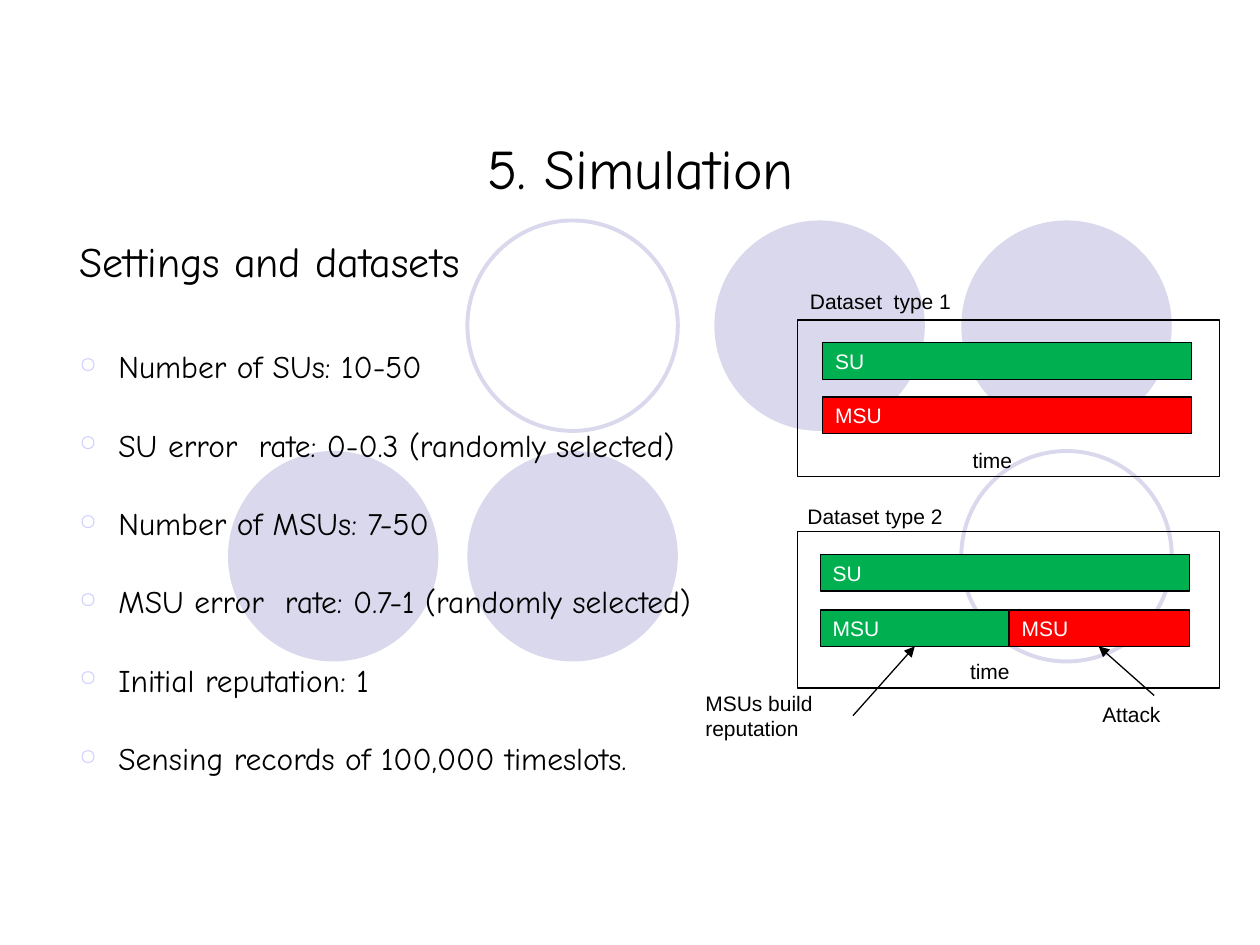
from lxml.etree import SubElement
from pptx import Presentation
from pptx.dml.color import RGBColor
from pptx.enum.shapes import MSO_CONNECTOR, MSO_SHAPE
from pptx.enum.text import MSO_ANCHOR, PP_ALIGN
from pptx.oxml.ns import qn
from pptx.util import Inches, Pt

HUES = {"black": "000000", "white": "FFFFFF", "green": "00B050",
        "red": "FF0000", "disc": "D9D8EC", "dot": "CCCCFF"}
HEX = {name: RGBColor.from_string(code) for name, code in HUES.items()}
HEAD, BODY = "Comic Neue", "Arial"

deck = Presentation()
deck.slide_width, deck.slide_height = Inches(10), Inches(7.5)
slide = deck.slides.add_slide(deck.slide_layouts[6])
shapes = slide.shapes


def add_form(kind, x, y, w, h, fill=None, line=None, width=0.75):
    form = shapes.add_shape(kind, Inches(x), Inches(y), Inches(w), Inches(h))
    form.shadow.inherit = False
    if fill:
        form.fill.solid()
        form.fill.fore_color.rgb = HEX[fill]
    else:
        form.fill.background()
    if line:
        form.line.color.rgb = HEX[line]
        form.line.width = Pt(width)
    else:
        form.line.fill.background()
    return form


def set_text(para, text, size=12, face=BODY, hue="black", **form):
    para.text = text
    for key, value in {"alignment": PP_ALIGN.LEFT, **form}.items():
        setattr(para, key, value)
    for key, value in {"size": Pt(size), "name": face}.items():
        setattr(para.font, key, value)
    para.font.color.rgb = HEX[hue]


# Backdrop circles: column, row, filled or ring
cols, rows = [1.81, 3.71, 5.67, 7.63], [1.75, 3.58]
for col, row, full in [(3, 0, True), (2, 0, True), (1, 0, False),
                       (1, 1, True), (0, 1, True), (3, 1, False)]:
    paint = {"fill": "disc"} if full else {"line": "disc", "width": 2.25}
    add_form(MSO_SHAPE.OVAL, cols[col], rows[row], 1.67, 1.67, **paint)

# Title
title = shapes.add_textbox(Inches(0.5), Inches(0.67), Inches(9.17), Inches(0.97))
frame = title.text_frame
frame.word_wrap, frame.vertical_anchor = True, MSO_ANCHOR.BOTTOM
set_text(frame.paragraphs[0], "5. Simulation", 32, HEAD, alignment=PP_ALIGN.CENTER)

# Settings list
box = shapes.add_textbox(Inches(0.13), Inches(1.87), Inches(6.13), Inches(3.56))
frame = box.text_frame
frame.word_wrap = True
for side in ("left", "top", "right", "bottom"):
    setattr(frame, f"margin_{side}", 0)
para = frame.paragraphs[0]
para._p.get_or_add_pPr().set("marL", str(Inches(0.5)))
set_text(para, "Settings and datasets", 24, HEAD)
items = ["Number of SUs: 10-50",
         "SU error  rate: 0-0.3 (randomly selected)",
         "Number of MSUs: 7-50",
         "MSU error  rate: 0.7-1 (randomly selected)",
         "Initial reputation: 1",
         "Sensing records of 100,000 timeslots."]
for num, item in enumerate(items):
    para = frame.add_paragraph()
    props = para._p.get_or_add_pPr()
    props.set("marL", str(Inches(0.81)))
    props.set("indent", str(Inches(-0.31)))
    tint = SubElement(props, qn("a:buClr"))
    SubElement(tint, qn("a:srgbClr"), val=HUES["dot"])
    SubElement(props, qn("a:buSzPct"), val="70000")
    SubElement(props, qn("a:buChar"), char="○")
    set_text(para, item, 18, HEAD, space_before=Pt(23.2 if num else 35))

# Dataset bars
for x, y, w, fill, label in [(6.53, 2.72, 2.93, "green", "SU"),
                             (6.53, 3.15, 2.93, "red", "MSU"),
                             (6.51, 4.4, 2.93, "green", "SU"),
                             (8.01, 4.84, 1.43, "red", "MSU"),
                             (6.51, 4.84, 1.5, "green", "MSU")]:
    bar = add_form(MSO_SHAPE.RECTANGLE, x, y, w, 0.29, fill, "black")
    bar.text_frame.vertical_anchor = MSO_ANCHOR.MIDDLE
    set_text(bar.text_frame.paragraphs[0], label, hue="white")

# Dataset frames
for y in (2.54, 4.22):
    add_form(MSO_SHAPE.RECTANGLE, 6.33, y, 3.35, 1.24, line="black")

# Labels
for x, y, w, h, label in [(6.33, 2.24, 1.57, 0.3, "Dataset  type 1"),
                          (7.62, 3.5, 0.75, 0.3, "time"),
                          (6.31, 3.95, 1.57, 0.3, "Dataset type 2"),
                          (7.6, 5.18, 0.75, 0.3, "time"),
                          (5.5, 5.43, 1.26, 0.5, "MSUs build reputation"),
                          (8.65, 5.52, 1.03, 0.3, "Attack")]:
    note = shapes.add_textbox(Inches(x), Inches(y), Inches(w), Inches(h))
    note.text_frame.word_wrap = True
    set_text(note.text_frame.paragraphs[0], label)

# Arrows to the two MSU phases
for ends in [(6.77, 5.68, 7.26, 5.13), (9.16, 5.52, 8.72, 5.13)]:
    arrow = shapes.add_connector(MSO_CONNECTOR.STRAIGHT, *map(Inches, ends))
    arrow.line.color.rgb = HEX["black"]
    arrow.line.width = Pt(0.75)
    SubElement(arrow.line._get_or_add_ln(), qn("a:tailEnd"), type="triangle")
    SubElement(arrow._element.spPr, qn("a:effectLst"))

deck.save("out.pptx")
